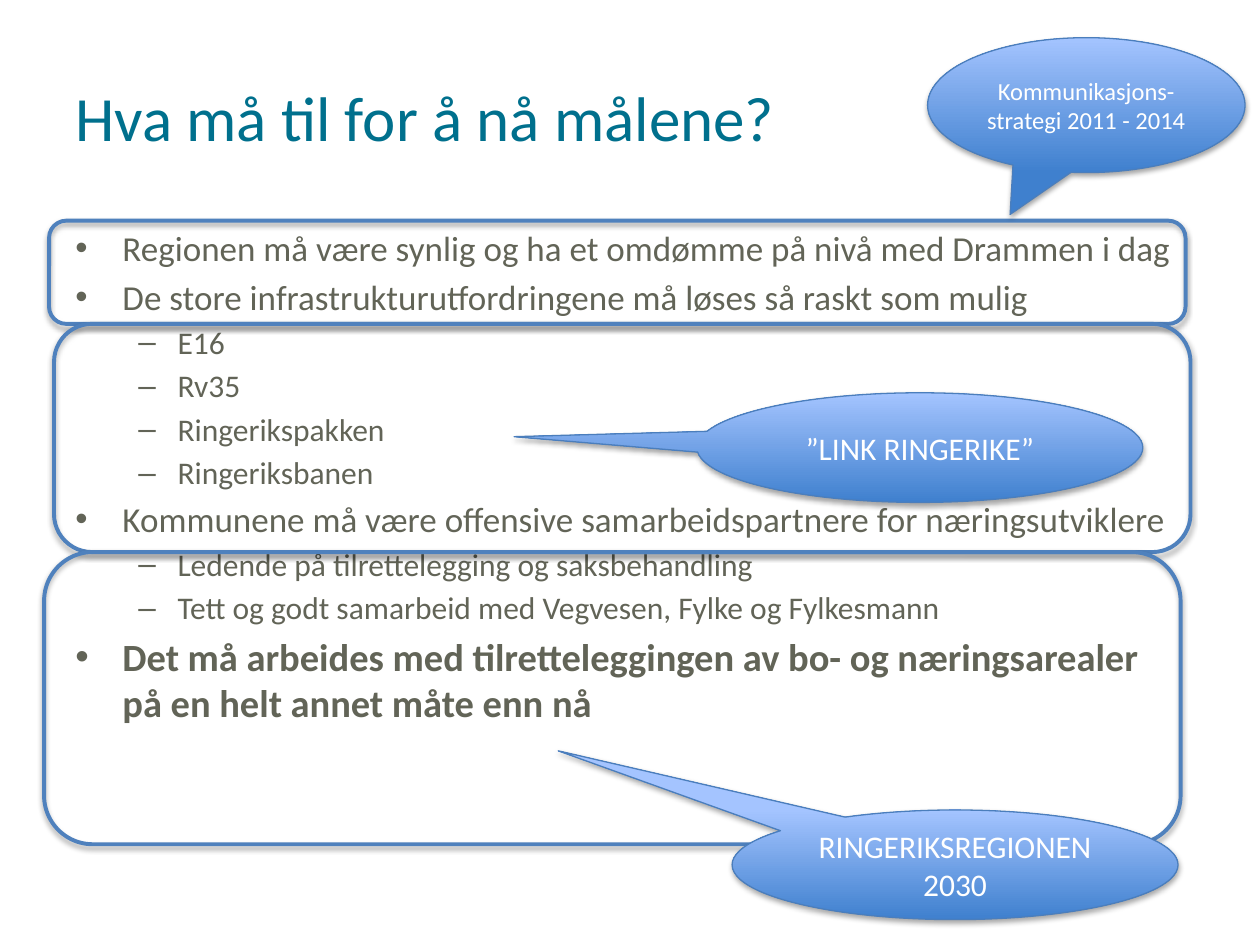
from lxml import etree
from pptx import Presentation
from pptx import util as u
from pptx.dml.color import RGBColor
from pptx.enum import shapes, text
from pptx.oxml import ns

COLORS = {
    "title": "00708D", "body": "626457", "white": "FFFFFF",
    "frame": "4F81BD", "callout_line": "4B7EBC",
    "bottom": "3F80CE", "top": "A4C4FF", "shadow": "000000",
}
TITLE = "Hva må til for å nå målene?"

# (level, size, bold, wording)
BULLETS = [
    (0, 20, False, "Regionen må være synlig og ha et omdømme på nivå med Drammen i dag"),
    (0, 20, False, "De store infrastrukturutfordringene må løses så raskt som mulig"),
    (1, 18, False, "E16"),
    (1, 18, False, "Rv35"),
    (1, 18, False, "Ringerikspakken"),
    (1, 18, False, "Ringeriksbanen"),
    (0, 20, False, "Kommunene må være offensive samarbeidspartnere for næringsutviklere"),
    (1, 18, False, "Ledende på tilrettelegging og saksbehandling"),
    (1, 18, False, "Tett og godt samarbeid med Vegvesen, Fylke og Fylkesmann"),
    (0, 22, True, "Det må arbeides med tilretteleggingen av bo- og næringsarealer "
                  "på en helt annet måte enn nå"),
]
# Per level: bullet sign, text indent and hanging indent in cm
LEVELS = [("•", 0.95, 0.95), ("–", 2.06, 0.79)]
SPACE_BEFORE = 0.18  # share of the text size

# Places are left, top, width, height in cm; the tip is relative to the ellipse
FRAME_WIDTH = 22.91
GOALS = [
    {"frame": (0.99, 4.45, FRAME_WIDTH, 2.08), "callout": (18.7, 0.76, 6.4, 2.72),
     "tip": (-0.24, 0.81), "size": 14, "lines": ["Kommunikasjons-strategi 2011 - 2014"]},
    {"frame": (1.09, 6.53, FRAME_WIDTH, 4.6), "callout": (14.05, 7.92, 8.99, 2.21),
     "tip": (-0.91, -0.1), "size": 18, "lines": ["”LINK RINGERIKE”"]},
    {"frame": (0.89, 11.13, FRAME_WIDTH, 5.89), "callout": (14.76, 16.33, 8.99, 2.21),
     "tip": (-0.89, -1.04), "size": 18, "lines": ["RINGERIKSREGIONEN", "2030"]},
]


def rgb(name):
    return RGBColor.from_string(COLORS[name])


def place(values):
    return [u.Cm(value) for value in values]


def write(paragraph, wording, color, size, bold=False):
    paragraph.add_run().text = wording
    paragraph.font.color.rgb = rgb(color)
    run_format = {"name": "Calibri", "size": u.Pt(size), "bold": bold}
    for font in (paragraph.font, paragraph.runs[0].font):
        font.color.rgb = rgb(color)
        for name, value in run_format.items():
            setattr(font, name, value)


def add_paragraph(frame, index):
    return frame.add_paragraph() if index else frame.paragraphs[0]


def add_text_box(slide, area, anchor):
    frame = slide.shapes.add_textbox(*place(area)).text_frame
    frame.word_wrap = True
    frame.vertical_anchor = anchor
    return frame


def add_bullet(paragraph, level):
    sign, indent, hanging = LEVELS[level]
    properties = paragraph._p.get_or_add_pPr()
    properties.set("marL", str(u.Cm(indent)))
    properties.set("indent", str(-u.Cm(hanging)))
    etree.SubElement(properties, ns.qn("a:buFont"), typeface="Arial")
    etree.SubElement(properties, ns.qn("a:buChar"), char=sign)


def add_outlined(group, kind, area, line_color, line_width):
    shape = group.shapes.add_shape(kind, *place(area))
    shape.line.color.rgb = rgb(line_color)
    shape.line.width = u.Pt(line_width)
    # Soft shadow straight below the shape
    shape.shadow.inherit = False
    effects = shape._element.spPr.find(ns.qn("a:effectLst"))
    shadow = etree.SubElement(effects, ns.qn("a:outerShdw"), blurRad=str(u.Pt(3.1)),
                              dist=str(u.Pt(1.8)), dir="5400000", rotWithShape="0")
    color = etree.SubElement(shadow, ns.qn("a:srgbClr"), val=COLORS["shadow"])
    etree.SubElement(color, ns.qn("a:alpha"), val="35000")
    return shape


def add_goal(slide, goal):
    group = slide.shapes.add_group_shape()
    kinds = shapes.MSO_SHAPE
    add_outlined(group, kinds.ROUNDED_RECTANGLE, goal["frame"],
                 "frame", 2.25).fill.background()

    callout = add_outlined(group, kinds.OVAL_CALLOUT, goal["callout"], "callout_line", 0.75)
    for index, offset in enumerate(goal["tip"]):
        callout.adjustments[index] = offset
    callout.fill.gradient()
    callout.fill.gradient_angle = 90
    for stop, color in zip(callout.fill.gradient_stops, ("bottom", "top")):
        stop.color.rgb = rgb(color)

    frame = callout.text_frame
    frame.word_wrap = True
    frame.vertical_anchor = text.MSO_ANCHOR.MIDDLE
    for index, line in enumerate(goal["lines"]):
        paragraph = add_paragraph(frame, index)
        paragraph.alignment = text.PP_ALIGN.CENTER
        write(paragraph, line, "white", goal["size"])


def main():
    presentation = Presentation()
    presentation.slide_width, presentation.slide_height = u.Cm(25.4), u.Cm(19.05)
    slide = presentation.slides.add_slide(presentation.slide_layouts[6])

    # Title
    title = add_text_box(slide, (1.27, 0.76, 22.86, 3.18), text.MSO_ANCHOR.MIDDLE)
    write(title.paragraphs[0], TITLE, "title", 36)

    # Bullet list
    body = add_text_box(slide, (1.27, 4.45, 22.86, 12.57), text.MSO_ANCHOR.TOP)
    for index, (level, size, bold, wording) in enumerate(BULLETS):
        paragraph = add_paragraph(body, index)
        paragraph.level = level
        add_bullet(paragraph, level)
        paragraph.space_before = u.Pt(size * SPACE_BEFORE if index else 0)
        write(paragraph, wording, "body", size, bold)

    # Frames with their callouts
    for goal in GOALS:
        add_goal(slide, goal)

    presentation.save("out.pptx")


if __name__ == "__main__":
    main()
